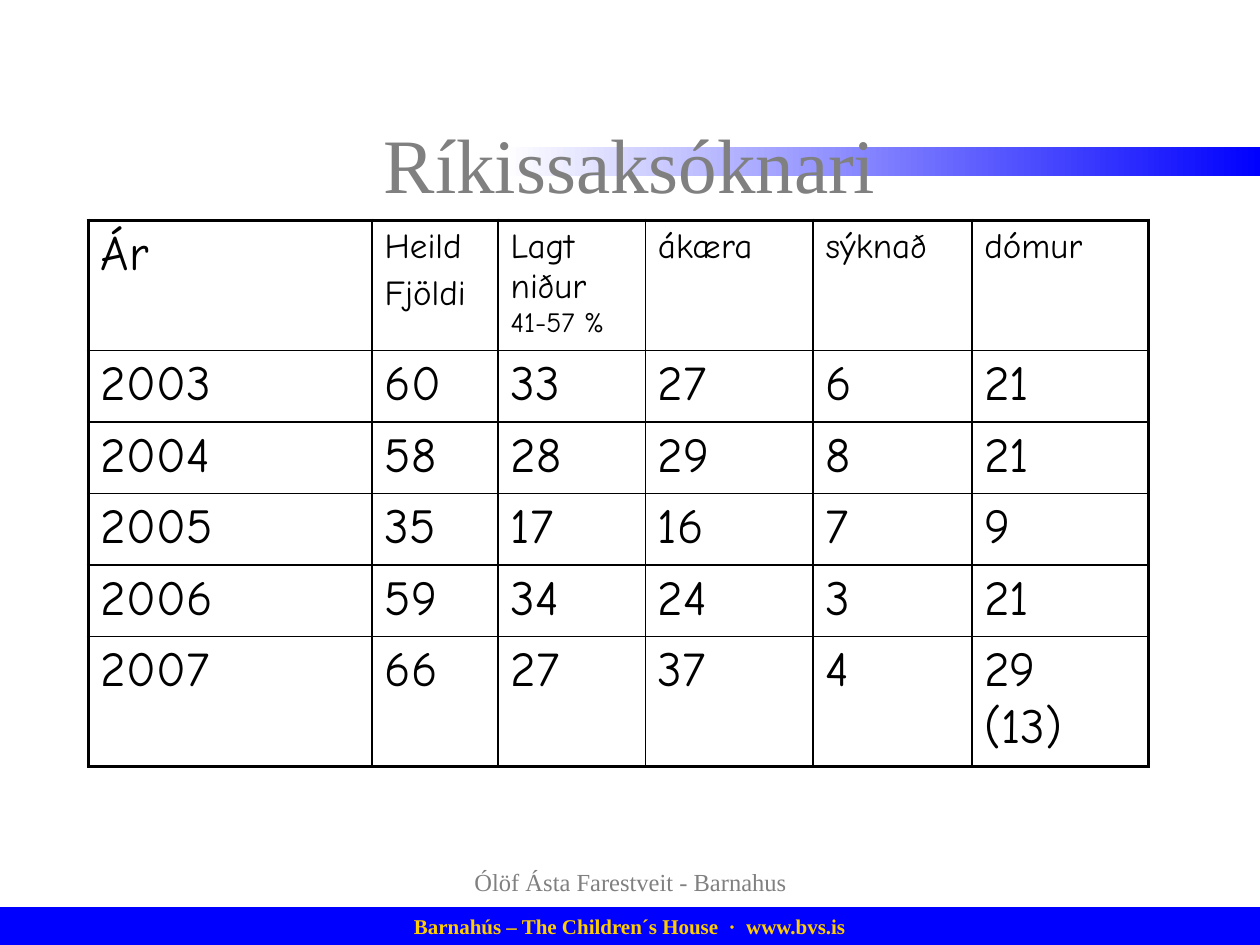
"""Build the Ríkissaksóknari slide with its table of yearly case counts."""
from lxml.etree import SubElement
from pptx import Presentation
from pptx.dml.color import RGBColor
from pptx.enum.shapes import MSO_SHAPE
from pptx.enum.text import MSO_ANCHOR, PP_ALIGN
from pptx.oxml.ns import qn
from pptx.util import Cm, Pt

TITLE = "Ríkissaksóknari"
AUTHOR = "Ólöf Ásta Farestveit - Barnahus"
FOOTER = "Barnahús – The Children´s House  ·  www.bvs.is"
HEAD = [
    [[("Ár", 28)]],
    [[("Heild", 20)], [("Fjöldi", 20)]],
    [[("Lagt niður ", 20), ("41-57 %", 16)]],
    [[("ákæra", 20)]],
    [[("sýknað", 20)]],
    [[("dómur", 20)]],
]
YEARS = [
    ("2003", "60", "33", "27", "6", "21"),
    ("2004", "58", "28", "29", "8", "21"),
    ("2005", "35", "17", "16", "7", "9"),
    ("2006", "59", "34", "24", "3", "21"),
    ("2007", "66", "27", "37", "4", "29\v(13)"),
]
COLS = [5.72, 2.54, 2.97, 3.38, 3.2, 3.56]
ROWS = [2.54] + [1.39] * 4 + [2.51]
HEX = {"blue": "0000FF", "gold": "FFCC00", "gray": "808080",
       "black": "000000", "white": "FFFFFF"}
SERIF, HAND = "Times New Roman", "Comic Neue"
THIN, THICK = Pt(1), Pt(2.25)


def rgb(name):
    """Return the named colour."""
    return RGBColor.from_string(HEX[name])


def style(font, face, size, tint, bold=False):
    """Set face, size, colour and weight of a font."""
    font.name, font.size, font.bold = face, Pt(size), bold
    font.color.rgb = rgb(tint)


def write(shape, text, size, tint, bold=False, anchor=MSO_ANCHOR.MIDDLE):
    """Put one centred line of serif text into a shape."""
    frame = shape.text_frame
    frame.word_wrap = True
    frame.vertical_anchor = anchor
    para = frame.paragraphs[0]
    para.text = text
    para.alignment = PP_ALIGN.CENTER
    style(para.font, SERIF, size, tint, bold)


def bar(slide, *box):
    """Add a plain rectangle without outline or shadow."""
    shape = slide.shapes.add_shape(MSO_SHAPE.RECTANGLE, *map(Cm, box))
    shape.shadow.inherit = False
    shape.line.fill.background()
    return shape


def label(slide, *box):
    """Add a text box."""
    return slide.shapes.add_textbox(*map(Cm, box))


def border(cell, row, col):
    """Draw thick lines on the outside of the table, thin ones inside."""
    edges = {"lnL": col == 0, "lnR": col == len(COLS) - 1,
             "lnT": row == 0, "lnB": row == len(ROWS) - 1}
    props = cell._tc.get_or_add_tcPr()
    for tag, outer in edges.items():
        line = SubElement(props, qn(f"a:{tag}"), w=str(THICK if outer else THIN))
        fill = SubElement(line, qn("a:solidFill"))
        SubElement(fill, qn("a:srgbClr"), val=HEX["black"])


def fill_cell(cell, paras):
    """Write paragraphs of (text, size) runs into a cell."""
    frame = cell.text_frame
    for num, runs in enumerate(paras):
        para = frame.add_paragraph() if num else frame.paragraphs[0]
        if num:
            para.space_before = Pt(4)
        style(para.font, HAND, runs[0][1], "black")
        for text, size in runs:
            first, *rest = text.split("\v")
            run = para.add_run()
            run.text = first
            style(run.font, HAND, size, "black")
            for part in rest:
                para.add_line_break()
                run = para.add_run()
                run.text = part
                style(run.font, HAND, size, "black")


def add_grid(slide):
    """Add the table of counts."""
    frame = slide.shapes.add_table(len(ROWS), len(COLS), Cm(1.78), Cm(4.44),
                                   Cm(sum(COLS)), Cm(sum(ROWS)))
    grid = frame.table
    grid.first_row = grid.horz_banding = False
    for col, width in zip(grid.columns, COLS):
        col.width = Cm(width)
    for row, height in zip(grid.rows, ROWS):
        row.height = Cm(height)
    body = [[[[(text, 28)]] for text in year] for year in YEARS]
    for r, row in enumerate([HEAD] + body):
        for c, paras in enumerate(row):
            cell = grid.cell(r, c)
            fill_cell(cell, paras)
            border(cell, r, c)
            cell.fill.background()


def main():
    """Build and save the slide."""
    deck = Presentation()
    deck.slide_width, deck.slide_height = Cm(25.4), Cm(19.05)
    slide = deck.slides.add_slide(deck.slide_layouts[6])

    foot = bar(slide, 0, 18.29, 25.4, 0.76)
    foot.fill.solid()
    foot.fill.fore_color.rgb = rgb("blue")
    foot.text_frame.margin_top = foot.text_frame.margin_bottom = 0
    write(foot, FOOTER, 12, "gold", bold=True)

    fade = bar(slide, 10.16, 2.97, 15.24, 0.58)
    fade.fill.gradient()
    fade.fill.gradient_angle = 0
    for stop, tint in zip(fade.fill.gradient_stops, ("white", "blue")):
        stop.color.rgb = rgb(tint)

    write(label(slide, 8.69, 17.35, 8.05, 1.27), AUTHOR, 14, "gray",
          anchor=MSO_ANCHOR.TOP)
    write(label(slide, 1.9, 1.7, 21.6, 3.18), TITLE, 44, "gray")
    add_grid(slide)
    deck.save("out.pptx")


if __name__ == "__main__":
    main()
